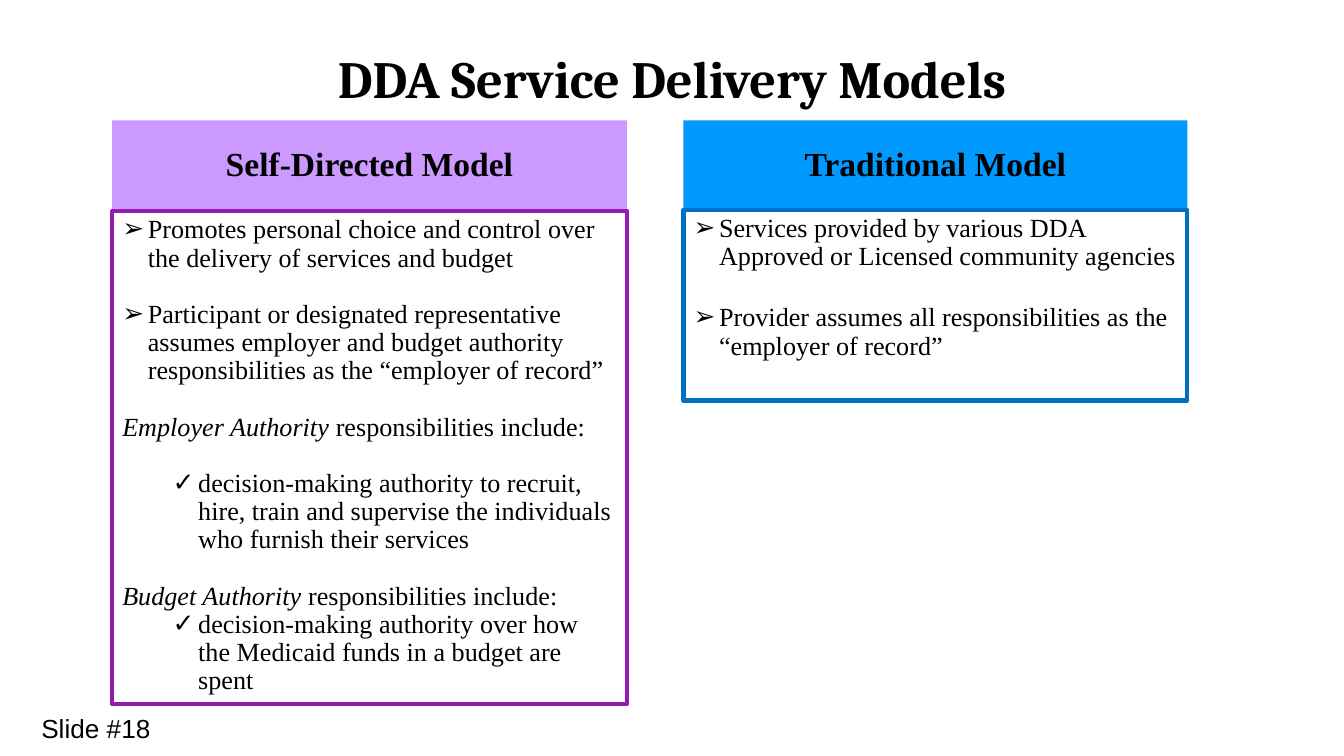
from typing import NamedTuple

from lxml.etree import SubElement
from pptx import Presentation
from pptx.dml.color import RGBColor
from pptx.enum.shapes import MSO_SHAPE as Preset
from pptx.enum.text import MSO_ANCHOR as Anchor, PP_ALIGN as Align
from pptx.oxml.ns import qn
from pptx.util import Pt

EMU_PER_PX = 4572  # 200 px to the inch
BODY_FONT = "Times New Roman"
LINE_SPACING = 0.9
GAP = 15  # points, about one line of body text

COLORS = {
    "text": "000000",
    "lilac": "CC99FF",
    "purple": "941BB5",
    "sky": "0099FF",
    "blue": "0070C0",
}


class Box(NamedTuple):
    left: int
    top: int
    width: int
    height: int


class Run(NamedTuple):
    text: str
    size: int = 14
    font: str = BODY_FONT
    bold: bool = False
    italic: bool = False


class Item(NamedTuple):
    runs: list[Run]
    bullet: str = ""
    indent: int = 0
    hanging: int = 0
    before: float = 0
    align: Align = Align.LEFT


class Model(NamedTuple):
    heading: str
    heading_box: Box
    heading_fill: str
    body_box: Box
    body_line: str
    items: list[Item]


def px(length: int) -> int:
    return length * EMU_PER_PX


def color(name: str) -> RGBColor:
    return RGBColor.from_string(COLORS[name])


def arrow(text: str, before: float = 0) -> Item:
    return Item([Run(text)], "➢", 38, 38, before)


def check(text: str, before: float = 0) -> Item:
    return Item([Run(text)], "✓", 113, 38, before)


def authority(name: str) -> Item:
    return Item([Run(f"{name} Authority ", italic=True),
                 Run("responsibilities include:")], before=GAP)


def centered(text: str, size: int, font: str = BODY_FONT) -> Item:
    return Item([Run(text, size, font, bold=True)], align=Align.CENTER)


def add_bullet(paragraph, item: Item) -> None:
    """Set the hanging indent and the bullet character."""
    properties = paragraph._p.get_or_add_pPr()
    properties.set("marL", str(px(item.indent)))
    properties.set("indent", str(-px(item.hanging)))
    bullet_color = SubElement(properties, qn("a:buClr"))
    SubElement(bullet_color, qn("a:srgbClr"), val=COLORS["text"])
    SubElement(properties, qn("a:buFont"), typeface="Arial")
    SubElement(properties, qn("a:buChar"), char=item.bullet)


def write(shape, items: list[Item], anchor: Anchor,
          line_spacing: float = LINE_SPACING) -> None:
    frame = shape.text_frame
    frame.word_wrap = True
    frame.vertical_anchor = anchor
    frame.margin_left = frame.margin_right = px(15)
    frame.margin_top = frame.margin_bottom = px(8)
    for index, item in enumerate(items):
        paragraph = frame.add_paragraph() if index else frame.paragraphs[0]
        if item.bullet:
            add_bullet(paragraph, item)
        paragraph.alignment = item.align
        paragraph.line_spacing = line_spacing
        paragraph.space_before = Pt(item.before)
        for part in item.runs:
            run = paragraph.add_run()
            run.text = part.text
            run.font.size = Pt(part.size)
            run.font.name = part.font
            run.font.bold = part.bold
            run.font.italic = part.italic
            run.font.color.rgb = color("text")


def add_label(slide, box: Box, item: Item, line_spacing: float) -> None:
    shape = slide.shapes.add_textbox(*map(px, box))
    write(shape, [item], Anchor.MIDDLE, line_spacing)


def add_panel(slide, box: Box, items: list[Item], anchor: Anchor,
              fill: str = "", line: str = "") -> None:
    shape = slide.shapes.add_shape(Preset.RECTANGLE, *map(px, box))
    shape.shadow.inherit = False
    if fill:
        shape.fill.solid()
        shape.fill.fore_color.rgb = color(fill)
    else:
        shape.fill.background()
    if line:
        shape.line.color.rgb = color(line)
        shape.line.width = Pt(2.25)
    else:
        shape.line.fill.background()
    write(shape, items, anchor)


def add_model(slide, model: Model) -> None:
    add_panel(slide, model.heading_box, [centered(model.heading, 18)],
              Anchor.MIDDLE, fill=model.heading_fill)
    add_panel(slide, model.body_box, model.items, Anchor.TOP,
              line=model.body_line)


MODELS = [
    Model("Self-Directed Model", Box(167, 179, 766, 135), "lilac",
          Box(167, 314, 766, 734), "purple", [
              arrow("Promotes personal choice and control over the delivery "
                    "of services and budget"),
              arrow("Participant or designated representative assumes employer "
                    "and budget authority responsibilities as the "
                    "“employer of record”", GAP),
              authority("Employer"),
              check("decision-making authority to recruit, hire, train and "
                    "supervise the individuals who furnish their services", GAP),
              authority("Budget"),
              check("decision-making authority over how the Medicaid funds in "
                    "a budget are spent"),
          ]),
    Model("Traditional Model", Box(1017, 179, 750, 135), "sky",
          Box(1017, 312, 750, 284), "blue", [
              arrow("Services provided by various DDA Approved or Licensed "
                    "community agencies"),
              arrow("Provider assumes all responsibilities as the "
                    "“employer of record”", 17.5),
          ]),
]


def main() -> None:
    presentation = Presentation()
    presentation.slide_width = px(2000)
    presentation.slide_height = px(1125)
    slide = presentation.slides.add_slide(presentation.slide_layouts[6])
    add_label(slide, Box(138, 12, 1724, 218),
              centered("DDA Service Delivery Models", 28, "Cambria"), LINE_SPACING)
    for model in MODELS:
        add_model(slide, model)
    add_label(slide, Box(6, 1044, 233, 80),
              Item([Run("Slide #18", font="Arial")], align=Align.RIGHT), 1.0)
    presentation.save("out.pptx")


if __name__ == "__main__":
    main()
